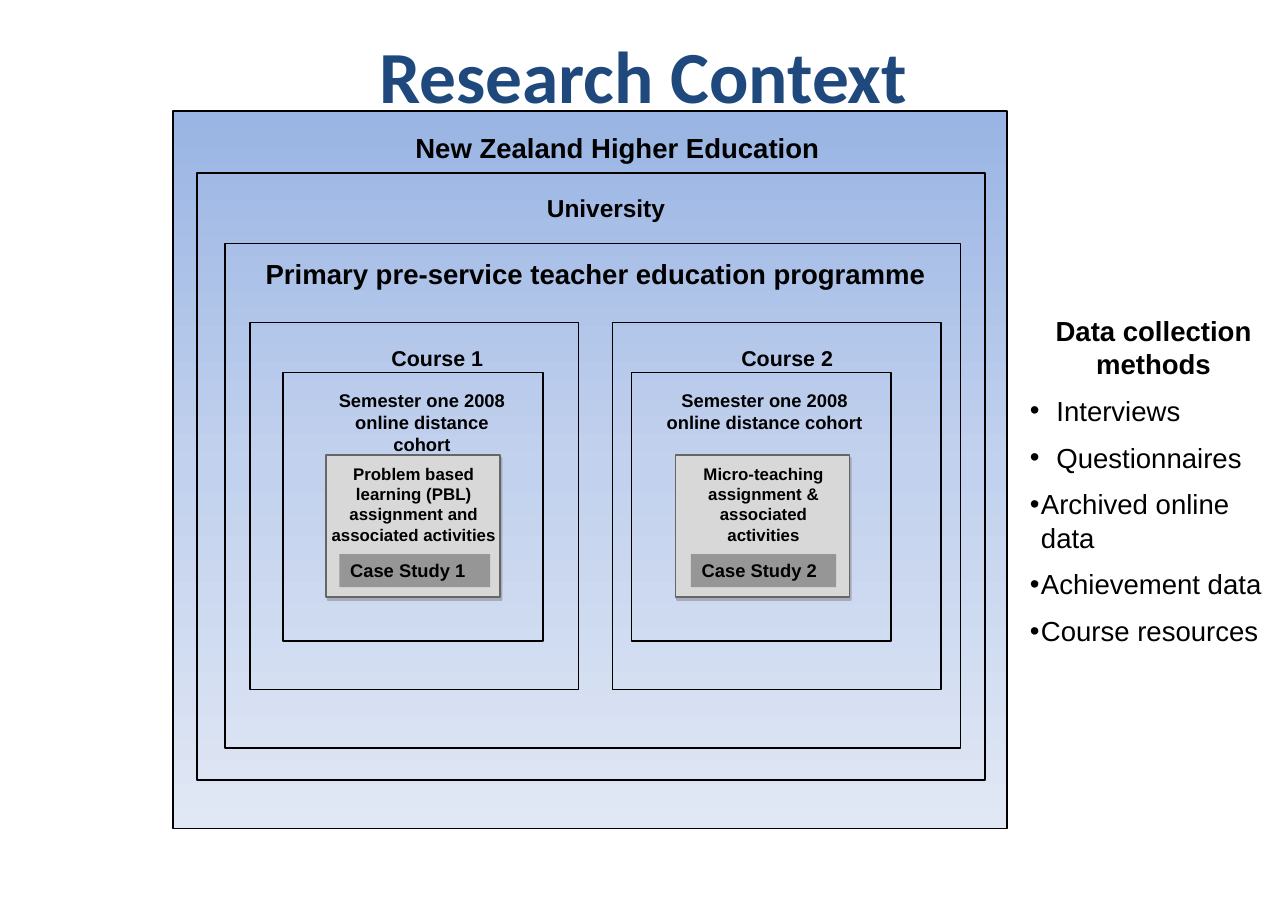
from lxml.etree import SubElement
from pptx import Presentation
from pptx.dml.color import RGBColor
from pptx.enum.shapes import MSO_SHAPE
from pptx.enum.text import MSO_ANCHOR, PP_ALIGN
from pptx.oxml import parse_xml
from pptx.oxml.ns import nsdecls, qn
from pptx.util import Inches, Pt

BLACK = "000000"
COURSES = [
    dict(name="Course 1", left=2.27, cohort_left=2.57, task_left=2.96,
         name_at=(3.29, 1.36), cohort_at=(3.01, 1.64), task_at=(2.97, 1.57),
         case_at=(3.08, 1.37), case="Case Study 1",
         task="Problem based learning (PBL) assignment and associated activities"),
    dict(name="Course 2", left=5.56, cohort_left=5.73, task_left=6.13,
         name_at=(6.42, 1.45), cohort_at=(6.01, 1.86), task_at=(6.27, 1.32),
         case_at=(6.27, 1.32), case="Case Study 2",
         task="Micro-teaching assignment & associated activities"),
]
METHODS = [("Interviews", 0.24), ("Questionnaires", 0.24), ("Archived online data", 0.1),
           ("Achievement data", 0.1), ("Course resources", 0.1)]


def rgb(color):
    return RGBColor.from_string(color)


def add_run(p, text, size, bold=True, color=BLACK, font="Arial"):
    r = p.add_run()
    r.text = text
    r.font.size = Pt(size)
    r.font.bold = bold
    r.font.name = font
    r.font.color.rgb = rgb(color)


def add_rect(s, x, y, w, h, fill=None, line=BLACK):
    sp = s.shapes.add_shape(MSO_SHAPE.RECTANGLE, Inches(x), Inches(y), Inches(w), Inches(h))
    sp.shadow.inherit = False
    if fill:
        sp.fill.solid()
        sp.fill.fore_color.rgb = rgb(fill)
    else:
        sp.fill.background()
    if line:
        sp.line.color.rgb = rgb(line)
        sp.line.width = Pt(1)
    else:
        sp.line.fill.background()
    return sp


def set_gradient(sp, colors):
    step = 100000 // (len(colors) - 1)
    stops = "".join(f'<a:gs pos="{i * step}"><a:srgbClr val="{c}"/></a:gs>'
                    for i, c in enumerate(colors))
    grad = parse_xml(f'<a:gradFill {nsdecls("a")} rotWithShape="1"><a:gsLst>{stops}</a:gsLst>'
                     '<a:lin ang="5400000" scaled="0"/></a:gradFill>')
    spPr = sp._element.spPr
    spPr.replace(spPr.find(qn("a:noFill")), grad)


def add_shadow(sp):
    effects = sp._element.spPr.find(qn("a:effectLst"))
    shadow = SubElement(effects, qn("a:outerShdw"), blurRad="0", dist=str(Pt(2.2)),
                        dir=str(63 * 60000), algn="ctr", rotWithShape="0")
    color = SubElement(shadow, qn("a:srgbClr"), val="7F7F7F")
    SubElement(color, qn("a:alpha"), val="50000")


def add_text(s, text, x, y, w, h, size, inset=(0, 0), align=PP_ALIGN.CENTER, **style):
    tf = s.shapes.add_textbox(Inches(x), Inches(y), Inches(w), Inches(h)).text_frame
    tf.word_wrap = True
    tf.margin_left = tf.margin_right = Inches(inset[0])
    tf.margin_top = tf.margin_bottom = Inches(inset[1])
    p = tf.paragraphs[0]
    p.alignment = align
    add_run(p, text, size, **style)
    return tf


def add_bullet(tf, text, indent):
    p = tf.add_paragraph()
    pPr = p._p.get_or_add_pPr()
    pPr.set("marL", str(Inches(indent)))
    pPr.set("indent", str(-Inches(indent)))
    SubElement(pPr, qn("a:buFont"), typeface="Arial")
    SubElement(pPr, qn("a:buChar"), char="•")
    p.alignment = PP_ALIGN.LEFT
    p.space_before = Pt(9)
    add_run(p, text, 18, bold=False)


def add_context(s):
    set_gradient(add_rect(s, 1.57, 1.01, 7.57, 6.51), ["9AB5E4", "C2D1ED", "E1E8F5"])
    add_rect(s, 1.79, 1.57, 7.15, 5.51)
    add_rect(s, 2.04, 2.21, 6.68, 4.58)
    add_text(s, "New Zealand Higher Education", 3.77, 1.19, 4.1, 0.3, 18, align=PP_ALIGN.LEFT)
    add_text(s, "University", 4.54, 1.75, 1.92, 0.23, 16)
    add_text(s, "Primary pre-service teacher education programme",
             2.27, 2.32, 6.27, 0.45, 18, inset=(0.06, 0.01))


def add_course(s, course):
    add_rect(s, course["left"], 2.93, 2.98, 3.33)
    add_rect(s, course["cohort_left"], 3.38, 2.36, 2.44)
    add_shadow(add_rect(s, course["task_left"], 4.13, 1.58, 1.29, "D8D8D8", "666666"))
    x, w = course["name_at"]
    add_text(s, course["name"], x, 3.08, w, 0.3, 14, inset=(0.1, 0.05))
    x, w = course["cohort_at"]
    add_text(s, "Semester one 2008 online distance cohort", x, 3.53, w, 0.6, 12)
    x, w = course["task_at"]
    add_text(s, course["task"], x, 4.2, w, 0.75, 11, inset=(0.02, 0.01))
    x, w = course["case_at"]
    tf = add_rect(s, x, 5.03, w, 0.3, "969696", None).text_frame
    tf.vertical_anchor = MSO_ANCHOR.TOP
    p = tf.paragraphs[0]
    p.alignment = PP_ALIGN.LEFT
    add_run(p, course["case"], 12)


def add_methods(s):
    tf = add_text(s, "Data collection methods", 9.25, 2.8, 2.44, 3.28, 18, inset=(0.1, 0.05))
    for text, indent in METHODS:
        add_bullet(tf, text, indent)


def main():
    prs = Presentation()
    prs.slide_width, prs.slide_height = Inches(11.69), Inches(8.27)
    s = prs.slides.add_slide(prs.slide_layouts[6])
    add_context(s)
    title = add_text(s, "Research Context", 0.58, 0.33, 10.52, 0.68, 48,
                     inset=(0.1, 0.05), color="1F497D", font="Calibri")
    title.vertical_anchor = MSO_ANCHOR.MIDDLE
    for course in COURSES:
        add_course(s, course)
    add_methods(s)
    prs.save("out.pptx")


if __name__ == "__main__":
    main()
